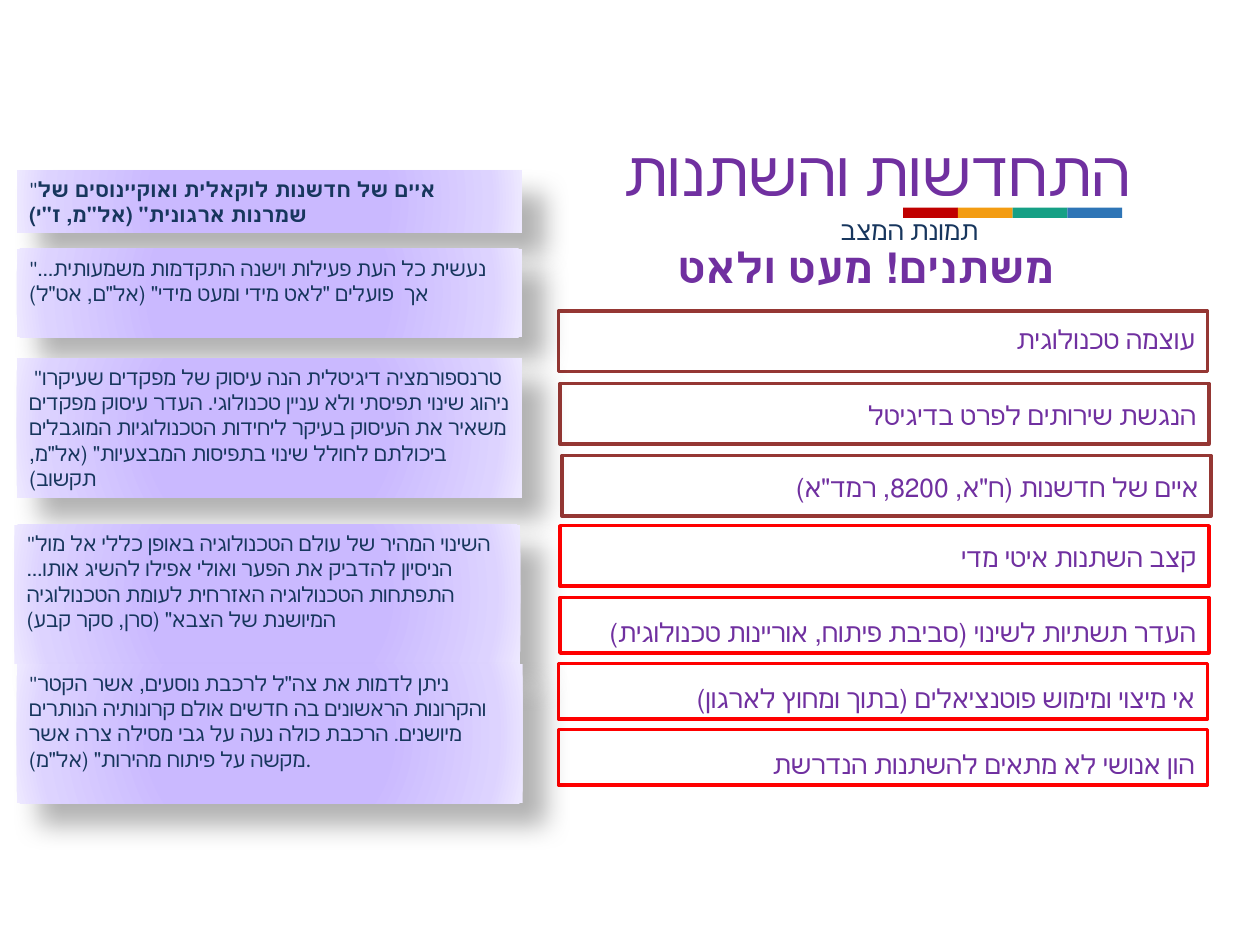
from pptx import Presentation
from pptx.dml.color import RGBColor
from pptx.enum.shapes import MSO_SHAPE
from pptx.enum.text import MSO_ANCHOR, PP_ALIGN
from pptx.oxml import parse_xml
from pptx.oxml.ns import nsdecls, qn
from pptx.util import Pt

RECT = MSO_SHAPE.RECTANGLE
TOP, MIDDLE = MSO_ANCHOR.TOP, MSO_ANCHOR.MIDDLE
LEFT, CENTER, RIGHT = PP_ALIGN.LEFT, PP_ALIGN.CENTER, PP_ALIGN.RIGHT

COLORS = {
    "purple": "7030A0", "navy": "17365D", "white": "FFFFFF",
    "strength": "953734", "gap": "FF0000", "shadow": "000000",
}
STRIPES = ["C00000", "F39C12", "16A085", "2E75B6"]
GLOW_STOPS = [(45, "CAB9FF"), (87, "DDD3FF"), (100, "EEE9FF")]

FINDINGS = [
    ("strength", (319.2, 177.8, 370.8, 34.6), 0.9, 3, "עוצמה טכנולוגית"),
    ("strength", (320, 219.2, 370.8, 34.6), 1.07, 6, "הנגשת שירותים לפרט בדיגיטל"),
    ("strength", (321.2, 260.3, 370.8, 34.6), 1.07, 6, "איים של חדשנות (ח\"א, 8200, רמד\"א)"),
    ("gap", (320, 300.4, 370.8, 34.6), 1.07, 6, "קצב השתנות איטי מדי"),
    ("gap", (320, 341.5, 370.8, 31.7), 1.4, 6,
     "העדר תשתיות לשינוי (סביבת פיתוח, אוריינות טכנולוגית)"),
    ("gap", (319.2, 379.2, 370.8, 31.7), 1.4, 6,
     "אי מיצוי ומימוש פוטנציאלים (בתוך ומחוץ לארגון)"),
    ("gap", (319.2, 417, 370.8, 31.7), 1.4, 6, "הון אנושי לא מתאים להשתנות הנדרשת"),
]

QUOTES = [
    ((9.5, 97.4, 288.7, 35.6),
     [("\"", False),
      ("איים של חדשנות לוקאלית ואוקיינוסים של שמרנות ארגונית\" (אל\"מ, ז\"י)", True)]),
    ((9.5, 142.3, 288.7, 50.4),
     [("\"נעשית כל העת פעילות וישנה התקדמות משמעותית... אך  פועלים "
       "\"לאט מידי ומעט מידי\" (אל\"ם, אט\"ל)", False)]),
    ((9.5, 204.8, 288.7, 79.5),
     [(" \"טרנספורמציה דיגיטלית הנה עיסוק של מפקדים שעיקרו ניהוג שינוי תפיסתי "
       "ולא עניין טכנולוגי. העדר עיסוק מפקדים משאיר את העיסוק בעיקר ליחידות "
       "הטכנולוגיות המוגבלים ביכולתם לחולל שינוי בתפיסות המבצעיות\" "
       "(אל\"מ, תקשוב)", False)]),
    ((8.2, 299.8, 289.2, 79.6),
     [("\"השינוי המהיר של עולם הטכנולוגיה באופן כללי אל מול הניסיון להדביק את "
       "הפער ואולי אפילו להשיג אותו... התפתחות הטכנולוגיה האזרחית לעומת "
       "הטכנולוגיה המיושנת של הצבא\" (סרן, סקר קבע)", False)]),
    ((9.5, 379.6, 289.2, 79.6),
     [("\"ניתן לדמות את צה\"ל לרכבת נוסעים, אשר הקטר והקרונות הראשונים בה חדשים "
       "אולם קרונותיה הנותרים מיושנים. הרכבת כולה נעה על גבי מסילה צרה אשר "
       "מקשה על פיתוח מהירות\" (אל\"מ).", False)]),
]


def write(shape, spans, font, size, color, anchor=TOP, wrap=True, **format_values):
    """Fill the shape with one paragraph of (text, bold) spans."""
    frame = shape.text_frame
    frame.word_wrap = wrap
    frame.vertical_anchor = anchor
    para = frame.paragraphs[0]
    for name, value in format_values.items():
        setattr(para, name, value)
    for text, bold in spans:
        span = para.add_run()
        span.text = text
        span.font.color.rgb = RGBColor.from_string(COLORS[color])
        for name, value in {"name": font, "size": Pt(size), "bold": bold}.items():
            setattr(span.font, name, value)


def add_rectangle(page, box, fill=None, line=None):
    """Add a rectangle without shadow, with an optional fill and outline."""
    shape = page.shapes.add_shape(RECT, *map(Pt, box))
    shape.shadow.inherit = False
    if fill:
        shape.fill.solid()
        shape.fill.fore_color.rgb = RGBColor.from_string(fill)
    if line:
        shape.line.color.rgb = RGBColor.from_string(line)
        shape.line.width = Pt(2)
    else:
        shape.line.fill.background()
    return shape


def add_stripe_bar(page, box):
    """Split the box into equal coloured stripes."""
    left, top, width, height = box
    step = width / len(STRIPES)
    for index, color in enumerate(STRIPES):
        add_rectangle(page, (left + index * step, top, step, height), color)


def add_finding(page, box, kind, spacing, after, text):
    """Add one outlined finding."""
    shape = add_rectangle(page, box, COLORS["white"], COLORS[kind])
    write(shape, [(text, False)], "Karla", 15, "purple", MIDDLE,
          alignment=RIGHT, line_spacing=spacing, space_after=Pt(after))


def add_quote(page, box, spans):
    """Add one quotation on a glowing panel with a soft shadow."""
    shape = add_rectangle(page, box)
    properties = shape._element.spPr
    stops = "".join(
        f'<a:gs pos="{position * 1000}"><a:srgbClr val="{color}"/></a:gs>'
        for position, color in GLOW_STOPS)
    properties.find(qn("a:prstGeom")).addnext(parse_xml(
        f'<a:gradFill {nsdecls("a")} rotWithShape="1"><a:gsLst>{stops}</a:gsLst>'
        '<a:path path="circle"><a:fillToRect l="50000" t="50000" r="50000" b="50000"/>'
        '</a:path></a:gradFill>'))
    properties.find(qn("a:effectLst")).append(parse_xml(
        f'<a:outerShdw {nsdecls("a")} blurRad="{Pt(15)}" dist="{Pt(18)}" dir="2700000" '
        f'algn="tl" rotWithShape="0"><a:srgbClr val="{COLORS["shadow"]}">'
        '<a:alpha val="30000"/></a:srgbClr></a:outerShdw>'))
    write(shape, spans, "Calibri", 12, "navy", alignment=LEFT)


def add_heading(page, box):
    """Place the title, its stripe bar and the two lines below it."""
    left, top, width, height = box
    title = page.shapes.title
    bounds = {"left": left, "top": top, "width": width, "height": height}
    for name, value in bounds.items():
        setattr(title, name, Pt(value))
    write(title, [("התחדשות והשתנות", False)], "Calibri", 36, "purple",
          wrap=False, alignment=CENTER)
    add_stripe_bar(page, (left + 177, top + 46, 125.2, 5.8))
    subtitle = page.shapes.add_textbox(Pt(left + 130.3), Pt(top + 46), Pt(213), Pt(25.2))
    write(subtitle, [(" תמונת המצב", False)], "Calibri", 15, "navy", alignment=LEFT)
    message = page.shapes.add_textbox(Pt(left + 41), Pt(top + 62), Pt(300), Pt(36))
    write(message, [("משתנים! מעט ולאט", True)], "Karla", 24, "purple", alignment=LEFT)


def main():
    """Build the slide and save it."""
    deck = Presentation()
    deck.slide_width, deck.slide_height = Pt(720), Pt(540)
    page = deck.slides.add_slide(deck.slide_layouts[5])
    add_heading(page, (339.1, 72.7, 324.7, 51.1))
    for kind, box, spacing, after, text in FINDINGS:
        add_finding(page, box, kind, spacing, after, text)
    for box, spans in QUOTES:
        add_quote(page, box, spans)
    deck.save("out.pptx")


if __name__ == "__main__":
    main()
